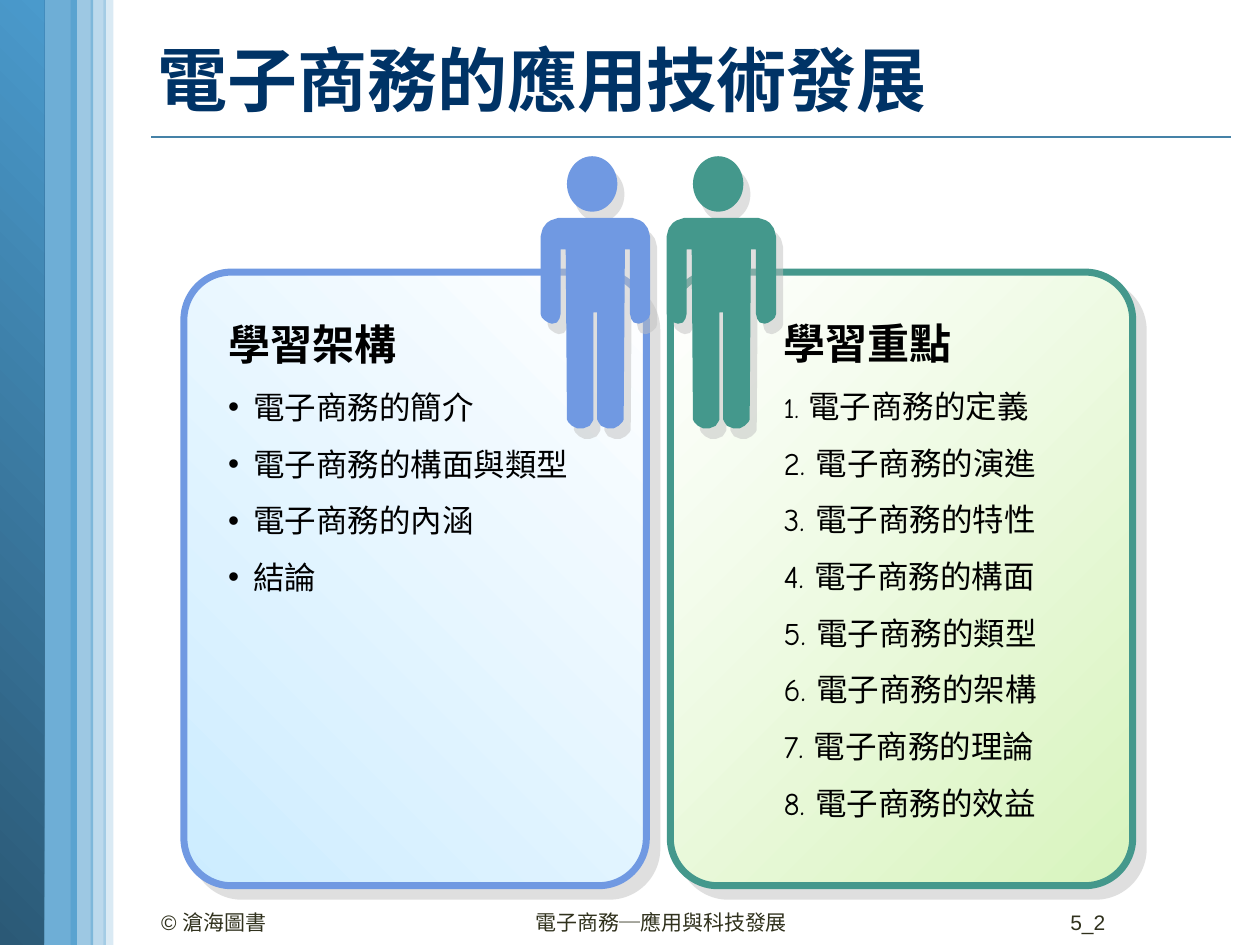
from lxml.etree import SubElement
from pptx import Presentation
from pptx.dml.color import RGBColor
from pptx.enum.lang import MSO_LANGUAGE_ID as Lang
from pptx.enum.shapes import MSO_CONNECTOR as Connector, MSO_SHAPE as Shape
from pptx.enum.text import MSO_ANCHOR as Anchor, MSO_AUTO_SIZE as AutoSize, PP_ALIGN as Align
from pptx.oxml.ns import qn
from pptx.util import Inches, Pt

COLORS = {
    "title": "003366", "text": "000000", "footer": "30311D", "rule": "4582A7",
    "band": "4A9ACC", "band_dark": "2B5976", "shadow": "C0C0C0", "white": "FFFFFF",
    "blue": "7099E2", "blue_tint": "CCECFF", "green": "44988C", "green_tint": "D8F4BE",
}
HAND, SANS = "Comic Neue", "Arial"
FIGURE_WIDTH = 0.87
# Left half of the body, from neck to crotch: x from the figure's left, y on the slide
HALF_BODY = [
    (0.14, 1.73), (0.08, 1.75), (0.05, 1.77), (0.02, 1.81), (0.01, 1.84), (0, 1.88),
    (0, 2.49), (0.01, 2.52), (0.03, 2.54), (0.06, 2.56), (0.09, 2.57), (0.13, 2.56),
    (0.15, 2.53), (0.16, 2.49), (0.16, 1.98), (0.2, 1.98), (0.21, 3.33), (0.22, 3.35),
    (0.25, 3.38), (0.29, 3.4), (0.34, 3.4), (0.39, 3.38), (0.41, 3.35), (0.42, 3.33),
    (0.42, 2.48),
]


def rgb(name):
    return RGBColor.from_string(COLORS[name])


class SlideBuilder:
    def __init__(self, slide):
        self.slide = slide
        self.shapes = slide.shapes

    def run(self, paragraph, text, size, font, color="text", bold=False):
        run = paragraph.add_run()
        run.text = text
        run.font.name, run.font.size, run.font.bold = font, Pt(size), bold
        run.font.color.rgb = rgb(color)
        run.font.language_id = Lang.TRADITIONAL_CHINESE

    def finish(self, shape, line=None, shadow=None):
        """Set the outline and, given (distance, angle), a hard offset shadow."""
        if line:
            shape.line.color.rgb = rgb(line)
            shape.line.width = Pt(4)
        else:
            shape.line.fill.background()
        shape.shadow.inherit = False
        if shadow:
            distance, angle = shadow
            effects = shape._element.spPr.find(qn("a:effectLst"))
            outer = SubElement(effects, qn("a:outerShdw"), dist=str(Pt(distance)),
                               dir=str(angle * 60000), algn="ctr", rotWithShape="0")
            tone = SubElement(outer, qn("a:srgbClr"), val=COLORS["shadow"])
            SubElement(tone, qn("a:alpha"), val="50000")

    def gradient(self, shape, first, last, clockwise):
        shape.fill.gradient()
        shape.fill.gradient_angle = 360 - clockwise
        for stop, color in zip(shape.fill.gradient_stops, (first, last)):
            stop.color.rgb = rgb(color)

    def band(self, left, width, opacity=None):
        """Full-height stripe; without an opacity it gets the dark gradient."""
        stripe = self.shapes.add_shape(Shape.RECTANGLE, Inches(left), 0,
                                       Inches(width), Inches(7.5))
        if opacity is None:
            self.gradient(stripe, "band_dark", "band", 315)
        else:
            stripe.fill.solid()
            stripe.fill.fore_color.rgb = rgb("band")
            tone = stripe._element.spPr.find(".//" + qn("a:srgbClr"))
            SubElement(tone, qn("a:alpha"), val=str(opacity * 1000))
        self.finish(stripe)

    def rule(self, left, right, y):
        rule = self.shapes.add_connector(Connector.STRAIGHT, Inches(left), Inches(y),
                                         Inches(right), Inches(y))
        rule.line.color.rgb = rgb("rule")
        rule.line.width = Pt(1)
        SubElement(rule._element.spPr, qn("a:effectLst"))

    def panel(self, left, color, first, last, clockwise):
        panel = self.shapes.add_shape(Shape.ROUNDED_RECTANGLE, Inches(left), Inches(2.16),
                                      Inches(3.67), Inches(4.87))
        panel.adjustments[0] = 0.103
        self.gradient(panel, first, last, clockwise)
        self.finish(panel, line=color, shadow=(8.5, 45))

    def figure(self, left, color):
        head = self.shapes.add_shape(Shape.OVAL, Inches(left + 0.21), Inches(1.24),
                                     Inches(0.4), Inches(0.44))
        outline = HALF_BODY + [(FIGURE_WIDTH - x, y) for x, y in reversed(HALF_BODY)]
        points = [(Inches(left + x), Inches(y)) for x, y in outline]
        pen = self.shapes.build_freeform(*points[0])
        pen.add_line_segments(points[1:], close=True)
        for part in (head, pen.convert_to_shape()):
            part.fill.solid()
            part.fill.fore_color.rgb = rgb(color)
            self.finish(part, shadow=(7.2, 56))

    def place(self, holder, left, top, width, height, anchor):
        """Move a placeholder to its position, in front of what is drawn so far."""
        holder.left, holder.top = Inches(left), Inches(top)
        holder.width, holder.height = Inches(width), Inches(height)
        frame = holder.text_frame
        frame.word_wrap, frame.auto_size = True, AutoSize.NONE
        frame.vertical_anchor = anchor
        self.shapes._spTree.append(holder._element)
        return frame

    def title(self, text):
        frame = self.place(self.shapes.title, 1.15, 0.07, 8.7, 1.11, Anchor.MIDDLE)
        paragraph = frame.paragraphs[0]
        paragraph.alignment = Align.LEFT
        self.run(paragraph, text, 40, HAND, "title", True)

    def topic_list(self, index, box, heading, items, indent, bullet=None):
        """Heading and items; each item is a list of (text, size) runs."""
        frame = self.place(self.slide.placeholders[index], *box, Anchor.TOP)
        for number, item in enumerate([[(heading, 24)]] + items):
            paragraph = frame.paragraphs[0] if number == 0 else frame.add_paragraph()
            margin = Inches(indent) if number else 0
            props = paragraph._p.get_or_add_pPr()
            props.set("marL", str(margin))
            props.set("indent", str(-margin))
            if number and bullet:
                SubElement(props, qn("a:buFont"), typeface=SANS)
                SubElement(props, qn("a:buChar"), char=bullet)
            else:
                SubElement(props, qn("a:buNone"))
            paragraph.line_spacing = 1.5
            paragraph.space_before = Pt(0)
            for text, size in item:
                self.run(paragraph, text, size, HAND, bold=number == 0)

    def footer(self, left, width, text, align=Align.LEFT):
        box = self.shapes.add_textbox(Inches(left), Inches(7.17), Inches(width), Inches(0.26))
        box.text_frame.word_wrap = True
        paragraph = box.text_frame.paragraphs[0]
        paragraph.alignment = align
        self.run(paragraph, text, 12, SANS, "footer")


def main():
    deck = Presentation()
    deck.slide_width, deck.slide_height = Inches(10), Inches(7.5)
    page = SlideBuilder(deck.slides.add_slide(deck.slide_layouts[3]))

    page.rule(1.2, 9.77, 1.09)
    for left, width, opacity in [(0.3, 0.31, 80), (0, 0.35, None), (0.82, 0.08, 20),
                                 (0.56, 0.18, 54), (0.72, 0.12, 37)]:
        page.band(left, width, opacity)
    page.title("電子商務的應用技術發展")

    page.panel(1.46, "blue", "blue_tint", "white", 315)
    page.figure(4.29, "blue")
    page.panel(5.32, "green", "white", "green_tint", 45)
    page.figure(5.29, "green")

    subject = "電子商務的"
    structure = [subject + "簡介", subject + "構面與類型", subject + "內涵", "結論"]
    page.topic_list(1, (1.71, 2.28, 3.1, 2.52), "學習架構",
                    [[(topic, 18)] for topic in structure], 0.2, "•")
    aspects = ["定義", "演進", "特性", "構面", "類型", "架構", "理論", "效益"]
    key_points = [[(f"{number}. ", 16 if number == 1 else 18), (subject + aspect, 18)]
                  for number, aspect in enumerate(aspects, 1)]
    page.topic_list(2, (6.12, 2.27, 2.83, 4.34), "學習重點", key_points, 0.38)

    page.footer(1.18, 2.33, "© 滄海圖書")
    page.footer(4.15, 2.36, "電子商務─應用與科技發展")
    page.footer(8.15, 0.72, "5_2", Align.RIGHT)
    deck.save("out.pptx")


if __name__ == "__main__":
    main()
